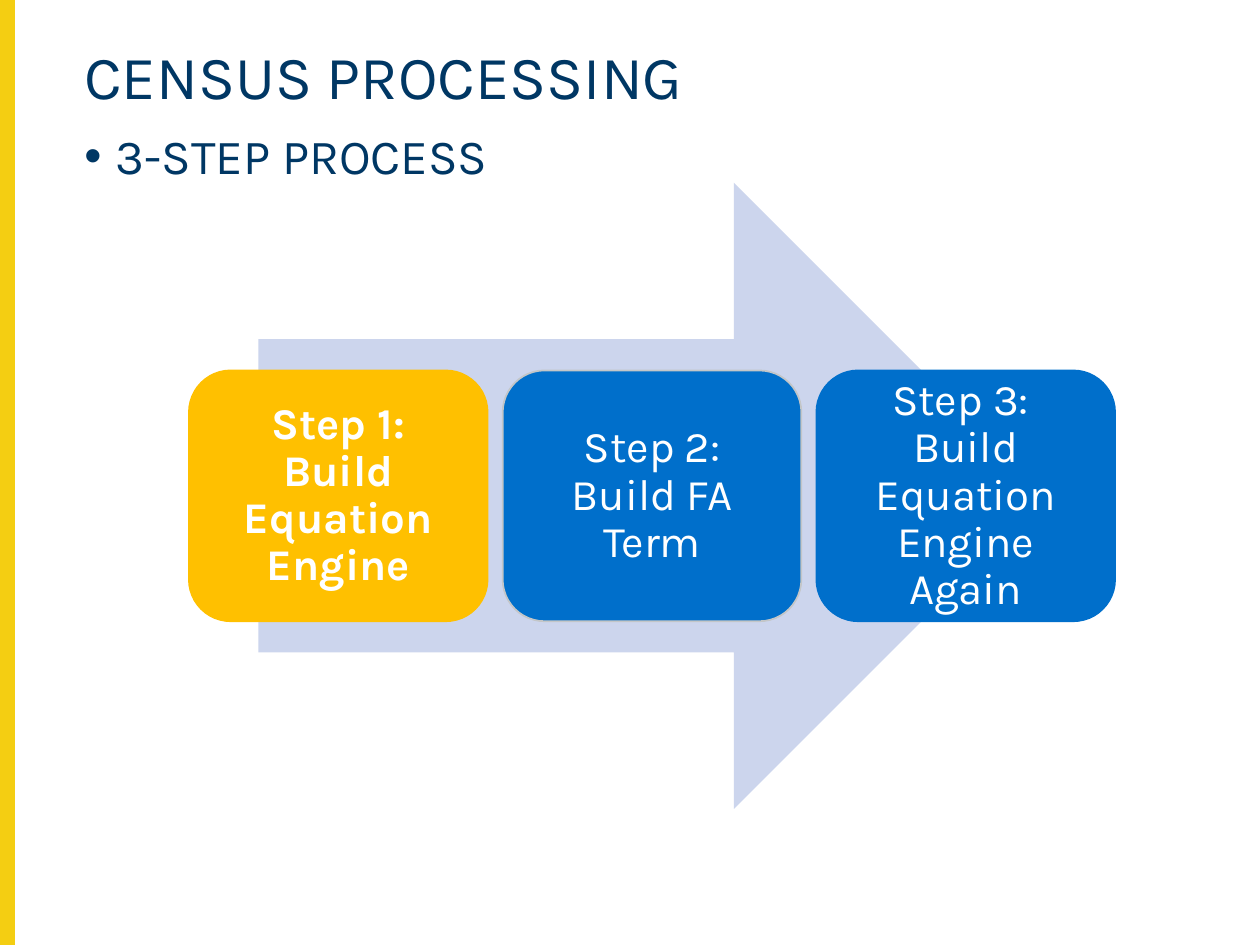
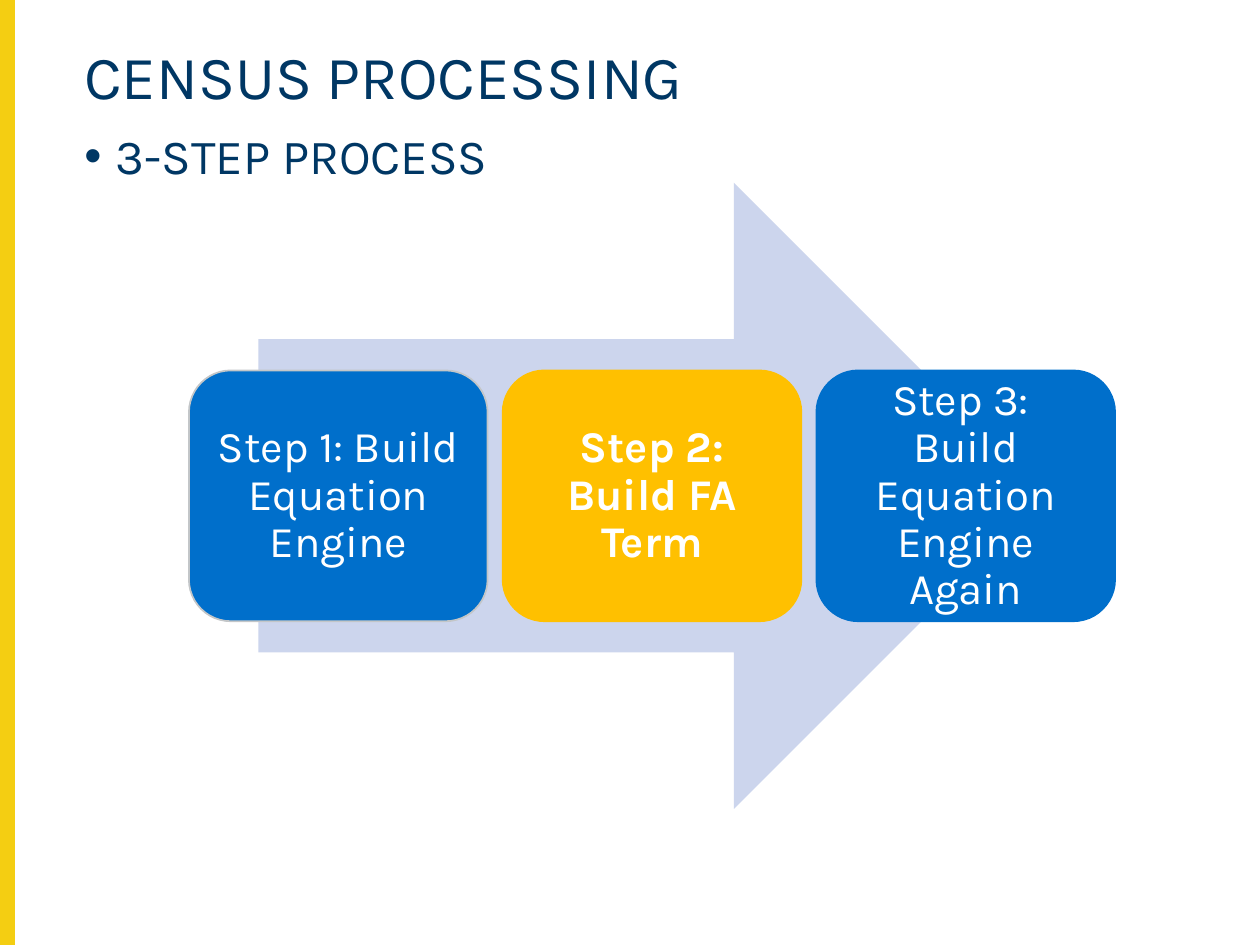
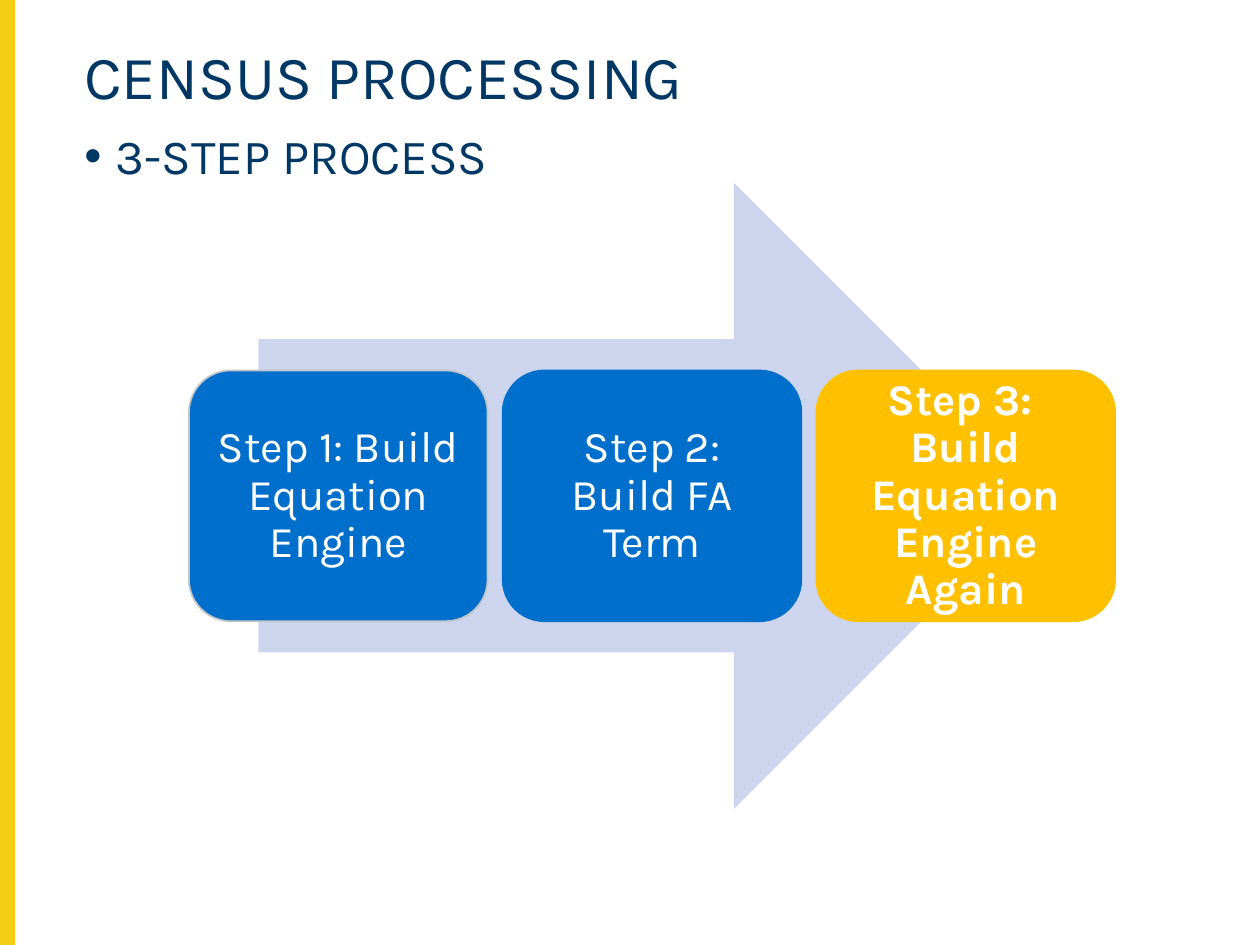
"""Build three census processing slides, each highlighting one step."""
import pptx
import pptx.dml.color
import pptx.enum.shapes
import pptx.enum.text
import pptx.util

Inches = pptx.util.Inches
Pt = pptx.util.Pt
ShapeType = pptx.enum.shapes.MSO_SHAPE
Align = pptx.enum.text.PP_ALIGN
Anchor = pptx.enum.text.MSO_ANCHOR

COLORS = {
    "band": "F4CE12",
    "heading": "003764",
    "arrow": "CCD5ED",
    "step": "006FCB",
    "highlight": "FFC000",
    "outline": "C3C6C8",
    "step_text": "FFFFFF",
}
STEPS = [
    "Step 1: Build Equation Engine",
    "Step 2: Build FA Term",
    "Step 3:  Build Equation Engine Again",
]
HEADINGS = [
    ("CENSUS PROCESSING", 35, (0.57, 0.32, 9.08, 0.86)),
    ("3-STEP PROCESS", 28, (0.57, 1, 9.12, 5.72)),
]
STEP_LEFT, STEP_PITCH = 1.5, 2.49


def add_filled_shape(slide, shape_type, box, fill, line=None):
    shape = slide.shapes.add_shape(shape_type, *map(Inches, box))
    shape.shadow.inherit = False
    shape.fill.solid()
    shape.fill.fore_color.rgb = pptx.dml.color.RGBColor.from_string(COLORS[fill])
    if line:
        shape.line.color.rgb = pptx.dml.color.RGBColor.from_string(COLORS[line])
        shape.line.width = Pt(1)
    else:
        shape.line.fill.background()
    return shape


def write_text(shape, text, size, color, align, bold=False):
    shape.text_frame.text = text
    paragraph = shape.text_frame.paragraphs[0]
    paragraph.alignment = align
    paragraph.line_spacing = 0.9
    paragraph.font.name = "Karla"
    paragraph.font.size = Pt(size)
    paragraph.font.bold = bold
    paragraph.font.color.rgb = pptx.dml.color.RGBColor.from_string(COLORS[color])
    return paragraph


presentation = pptx.Presentation()
presentation.slide_width = Inches(10)
presentation.slide_height = Inches(7.5)
layout = presentation.slide_layouts[1]

for active in range(len(STEPS)):
    slide = presentation.slides.add_slide(layout)
    if active == 0:
        band = add_filled_shape(slide, ShapeType.RECTANGLE, (0, 0, 0.11, 7.5), "band", "band")
        layout.shapes.element.insert(2, band.element)

    for placeholder, (text, size, box) in zip(slide.placeholders, HEADINGS):
        placeholder.left, placeholder.top, placeholder.width, placeholder.height = map(Inches, box)
        placeholder.text_frame.vertical_anchor = Anchor.TOP
        paragraph = write_text(placeholder, text, size, "heading", Align.LEFT)
    paragraph.space_before = Pt(10)
    properties = paragraph._p.get_or_add_pPr()
    properties.set("marL", str(Inches(0.25)))
    properties.set("indent", str(Inches(-0.25)))

    add_filled_shape(slide, ShapeType.RIGHT_ARROW, (2.05, 1.45, 6.26, 4.97), "arrow")

    first_inactive = 1 if active == 0 else 0
    for index, text in enumerate(STEPS):
        fill = "highlight" if index == active else "step"
        line = "outline" if index == first_inactive else fill
        box = (STEP_LEFT + index * STEP_PITCH, 2.94, 2.37, 1.99)
        step = add_filled_shape(slide, ShapeType.ROUNDED_RECTANGLE, box, fill, line)
        frame = step.text_frame
        frame.word_wrap = True
        frame.vertical_anchor = Anchor.MIDDLE
        frame.margin_left = frame.margin_right = Inches(0.1)
        frame.margin_top = frame.margin_bottom = Inches(0.1)
        write_text(step, text, 25, "step_text", Align.CENTER, bold=index == active)

presentation.save("out.pptx")
